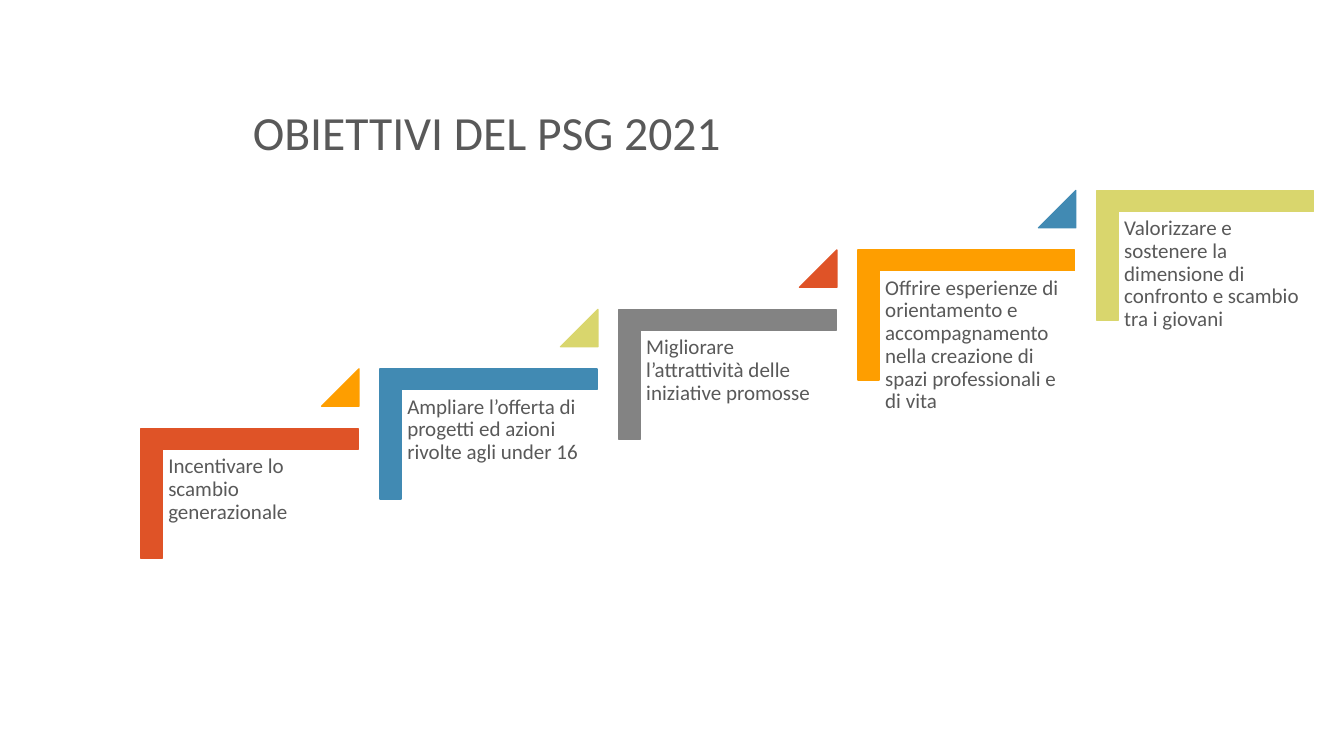
from pptx import Presentation
from pptx.dml.color import RGBColor
from pptx.enum.shapes import MSO_SHAPE
from pptx.enum.text import MSO_ANCHOR
from pptx.util import Inches, Pt

TEXT_COLOR = "595959"
STEP_COLORS = ["DF5327", "418AB3", "838383", "FE9E00", "D9D66D"]
GOALS = [
    "Incentivare lo scambio generazionale",
    "Ampliare l’offerta di progetti ed azioni rivolte agli under 16",
    "Migliorare l’attrattività delle iniziative promosse",
    "Offrire esperienze di orientamento e accompagnamento nella creazione "
    "di spazi professionali e di vita",
    "Valorizzare e sostenere la dimensione di confronto e scambio tra i giovani",
]
STEP_WIDTH, STEP_HEIGHT = 2.15, 1.29
STEP_RIGHT, STEP_UP = 2.37, 0.59


def rgb(color):
    return RGBColor.from_string(color)


def add_text(slide, left, top, width, height, wording, size, inset=None,
             anchor=MSO_ANCHOR.TOP):
    box = slide.shapes.add_textbox(Inches(left), Inches(top),
                                   Inches(width), Inches(height))
    frame = box.text_frame
    frame.word_wrap = True
    frame.vertical_anchor = anchor
    if inset is not None:
        frame.margin_left = frame.margin_right = Inches(inset)
        frame.margin_top = frame.margin_bottom = Inches(inset)
    paragraph = frame.paragraphs[0]
    paragraph.line_spacing = 0.9
    run = paragraph.add_run()
    run.text = wording
    run.font.name = "Calibri"
    run.font.size = Pt(size)
    run.font.color.rgb = rgb(TEXT_COLOR)


def add_solid(slide, preset, left, top, width, height, color, adjustments):
    solid = slide.shapes.add_shape(preset, Inches(left), Inches(top),
                                   Inches(width), Inches(height))
    solid.shadow.inherit = False
    solid.fill.solid()
    solid.fill.fore_color.rgb = rgb(color)
    solid.line.color.rgb = rgb(color)
    solid.line.width = Pt(1)
    for index, value in enumerate(adjustments):
        solid.adjustments[index] = value
    return solid


def add_step(slide, left, top, goal, color):
    # The corner is turned a quarter, so its sides swap around its centre
    shift = (STEP_WIDTH - STEP_HEIGHT) / 2
    corner = add_solid(slide, MSO_SHAPE.CORNER, left + shift, top - shift,
                       STEP_HEIGHT, STEP_WIDTH, color, [0.16, 0.16])
    corner.rotation = 90
    add_text(slide, left + 0.21, top + 0.21, 1.94, 1.7, goal, 15, inset=0.06)


def add_staircase(slide, left, top):
    last = len(GOALS) - 1
    for number, (goal, color) in enumerate(zip(GOALS, STEP_COLORS)):
        step_left = left + number * STEP_RIGHT
        step_top = top - number * STEP_UP
        add_step(slide, step_left, step_top, goal, color)
        # Triangle leading up to the next step
        if number < last:
            rise_color = STEP_COLORS[(number + 3) % len(STEP_COLORS)]
            add_solid(slide, MSO_SHAPE.ISOSCELES_TRIANGLE, step_left + 1.79,
                      step_top - 0.59, 0.37, 0.37, rise_color, [1])


def main():
    presentation = Presentation()
    presentation.slide_width = Inches(13.33)
    presentation.slide_height = Inches(7.5)
    slide = presentation.slides.add_slide(presentation.slide_layouts[6])

    # Title
    add_text(slide, 2.41, 0.33, 10.25, 1.31, "OBIETTIVI DEL PSG 2021", 34,
             anchor=MSO_ANCHOR.BOTTOM)
    # Rising goals
    add_staircase(slide, 1.4, 4.25)

    presentation.save("out.pptx")


if __name__ == "__main__":
    main()
